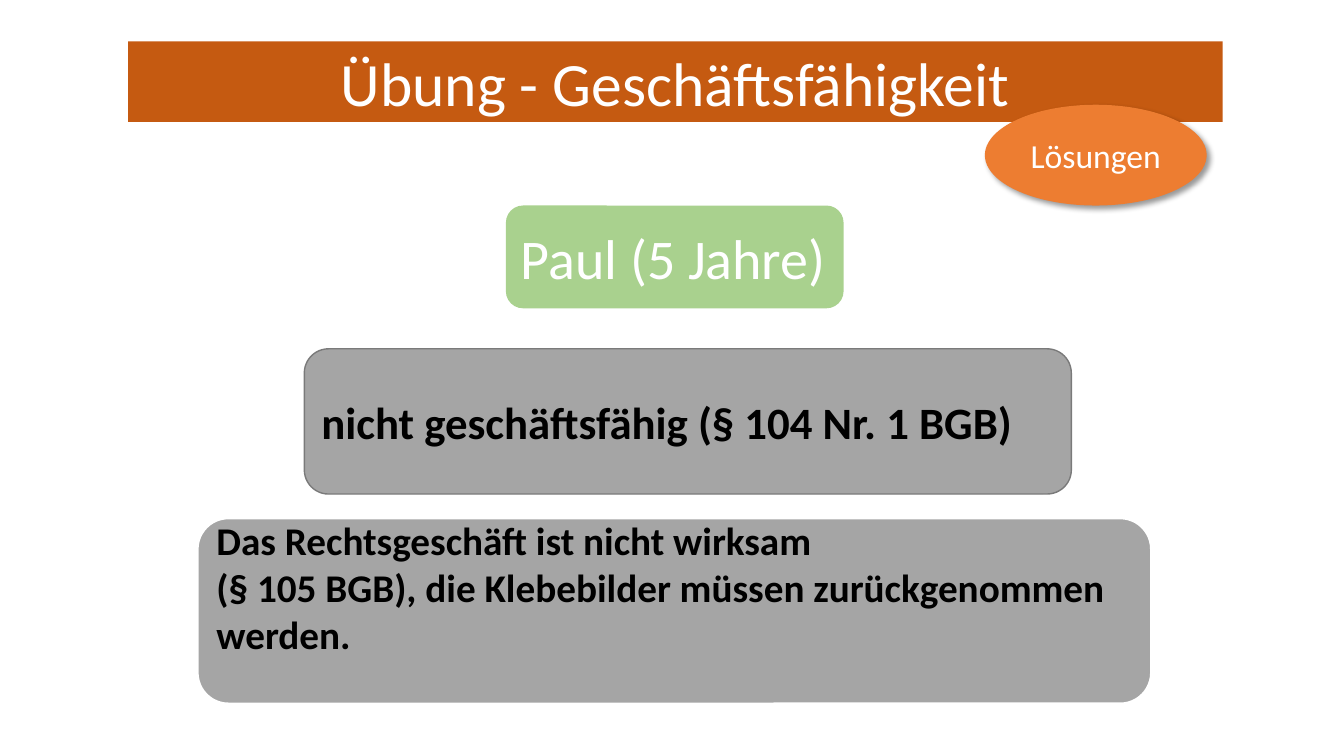
from lxml import etree
from pptx import Presentation
from pptx.dml.color import RGBColor
from pptx.enum.shapes import MSO_SHAPE
from pptx.enum.text import MSO_ANCHOR, MSO_AUTO_SIZE, PP_ALIGN
from pptx.oxml import parse_xml
from pptx.oxml.ns import nsdecls, qn
from pptx.util import Cm, Pt

ROUNDED = MSO_SHAPE.ROUNDED_RECTANGLE
ELLIPSE = MSO_SHAPE.OVAL
LEFT, CENTER = PP_ALIGN.LEFT, PP_ALIGN.CENTER
MIDDLE = MSO_ANCHOR.MIDDLE
NO_AUTOFIT = MSO_AUTO_SIZE.NONE

FONT = "Calibri"
COLORS = {
    "title": "C55A11",
    "person": "A9D18E",
    "answer": "A5A5A5",
    "answer_edge": "7A7A7A",
    "badge": "ED7D31",
    "white": "FFFFFF",
    "black": "000000",
}

TITLE = {
    "lines": ["Übung - Geschäftsfähigkeit"], "box": (3.23, 1.04, 27.58, 2.03),
    "fill": "title", "size": 44, "color": "white", "align": CENTER,
}
BOXES = [
    {"lines": ["Paul (5 Jahre)"], "box": (12.75, 5.18, 8.51, 2.59),
     "fill": "person", "size": 40, "color": "white"},
    {"lines": ["nicht geschäftsfähig (§ 104 Nr. 1 BGB)"], "box": (7.67, 8.79, 19.33, 3.66),
     "fill": "answer", "line": ("answer_edge", 1), "size": 32, "color": "black", "bold": True},
    {"lines": ["Lösungen"], "box": (24.82, 2.64, 5.59, 2.54), "kind": ELLIPSE,
     "fill": "badge", "size": 24, "color": "white", "align": CENTER, "shadow": True},
    {"lines": ["Das Rechtsgeschäft ist nicht wirksam",
               "(§ 105 BGB), die Klebebilder müssen zurückgenommen werden."],
     "box": (4.98, 13.06, 24.03, 4.67), "fill": "answer", "line": ("white", 1.5),
     "size": 28, "color": "black", "bold": True, "bottom": 1.33},
]


def rgb(name):
    return RGBColor.from_string(COLORS[name])


def place(shape, box):
    shape.left, shape.top, shape.width, shape.height = (Cm(value) for value in box)


def paint(shape, item):
    shape.fill.solid()
    shape.fill.fore_color.rgb = rgb(item["fill"])
    if "line" in item:
        color, width = item["line"]
        shape.line.color.rgb = rgb(color)
        shape.line.width = Pt(width)
    else:
        shape.line.fill.background()


def write(shape, item):
    frame = shape.text_frame
    frame.word_wrap = True
    frame.auto_size = NO_AUTOFIT
    frame.vertical_anchor = MIDDLE
    frame.margin_left = frame.margin_right = Cm(0.25)
    frame.margin_top = Cm(0.13)
    frame.margin_bottom = Cm(item.get("bottom", 0.13))
    paragraph = frame.paragraphs[0]
    paragraph.alignment = item.get("align", LEFT)
    paragraph.line_spacing = 1.0
    for index, line in enumerate(item["lines"]):
        if index:
            paragraph.add_line_break()
        run = paragraph.add_run()
        run.text = line
        run.font.name = FONT
        run.font.size = Pt(item["size"])
        run.font.bold = item.get("bold", False)
        run.font.color.rgb = rgb(item["color"])


def round_corners(shape):
    geometry = parse_xml(f'<a:prstGeom {nsdecls("a")} prst="roundRect"><a:avLst/></a:prstGeom>')
    shape.element.spPr.find(qn("a:xfrm")).addnext(geometry)


def cast_shadow(shape):
    effects = shape.element.spPr.find(qn("a:effectLst"))
    shadow = etree.SubElement(effects, qn("a:outerShdw"), blurRad=str(Pt(4)),
                              dist=str(Pt(3)), dir="2700000", algn="tl", rotWithShape="0")
    color = etree.SubElement(shadow, qn("a:srgbClr"), val=COLORS["black"])
    etree.SubElement(color, qn("a:alpha"), val="40000")


def main():
    presentation = Presentation()
    presentation.slide_width, presentation.slide_height = Cm(33.87), Cm(19.05)
    slide = presentation.slides.add_slide(presentation.slide_layouts[5])

    title = slide.shapes.title
    place(title, TITLE["box"])
    round_corners(title)
    paint(title, TITLE)
    write(title, TITLE)

    for item in BOXES:
        box = (Cm(value) for value in item["box"])
        shape = slide.shapes.add_shape(item.get("kind", ROUNDED), *box)
        paint(shape, item)
        shape.shadow.inherit = False
        if item.get("shadow"):
            cast_shadow(shape)
        write(shape, item)

    presentation.save("out.pptx")


if __name__ == "__main__":
    main()
